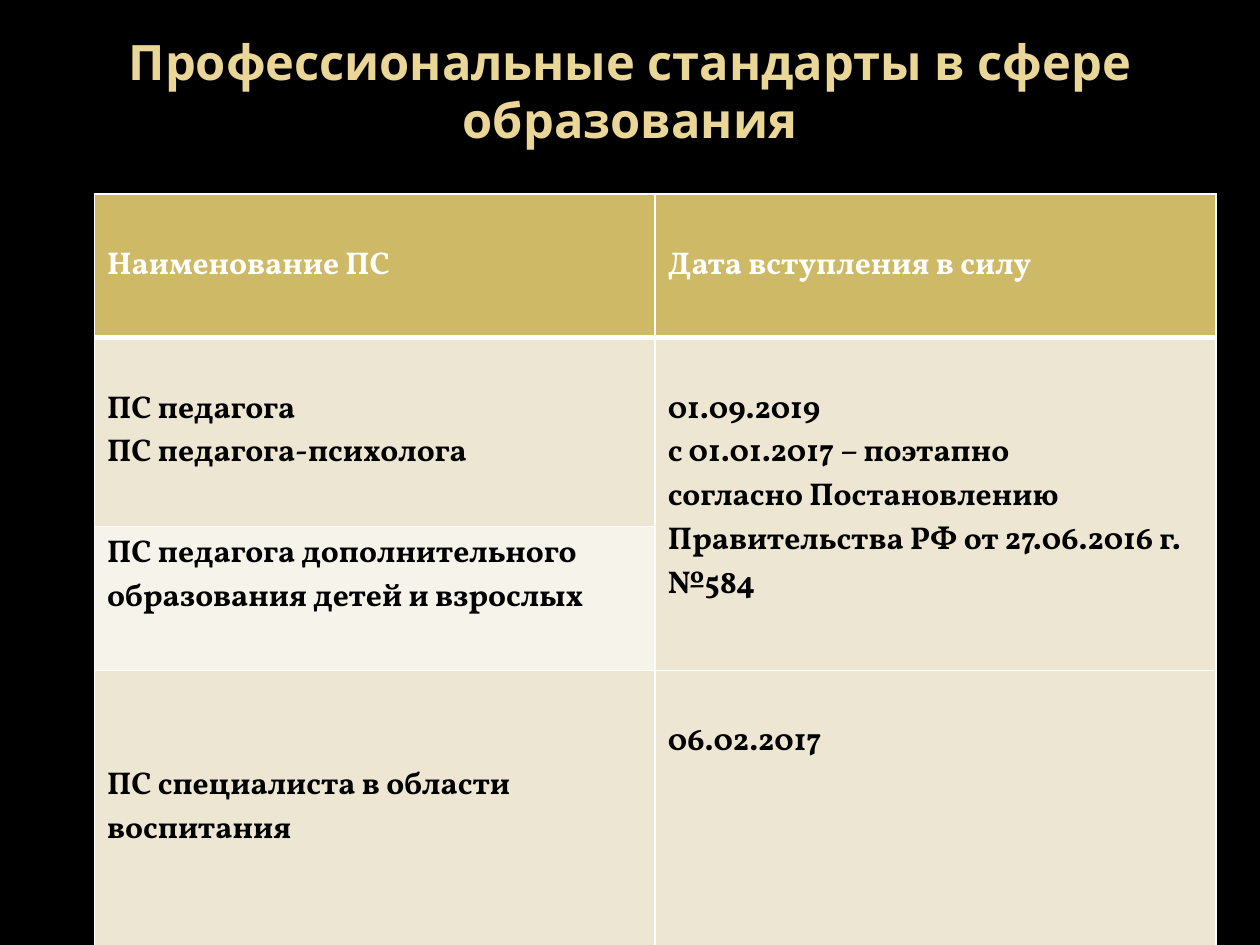
from dataclasses import dataclass

from lxml.etree import SubElement
from pptx import Presentation
from pptx.dml.color import RGBColor
from pptx.enum.text import MSO_ANCHOR as Anchor, PP_ALIGN as Align
from pptx.oxml.ns import qn
from pptx.util import Inches, Pt


@dataclass(frozen=True)
class Theme:
    background: str = "000000"
    title: str = "EAD696"
    header: str = "CEB966"
    band: str = "EDE6D3"
    light_band: str = "F6F3EA"
    header_text: str = "FFFFFF"
    body_text: str = "000000"
    border: str = "FFFFFF"
    title_font: str = "Noto Sans"
    table_font: str = "Vollkorn"
    title_size: float = 27.9
    table_size: float = 18
    thin: float = 1
    thick: float = 3


@dataclass
class CellContent:
    lines: list
    fill: str
    color: str
    top: float = 0.4
    rows: int = 1


class SlideBuilder:
    def __init__(self, deck, theme):
        self.theme = theme
        self.slide = deck.slides.add_slide(deck.slide_layouts[5])
        fill = self.slide.background.fill
        fill.solid()
        fill.fore_color.rgb = RGBColor.from_string(theme.background)

    def style(self, font, name, size, color):
        values = {"name": name, "size": Pt(size), "bold": True}
        for key, value in values.items():
            setattr(font, key, value)
        font.color.rgb = RGBColor.from_string(color)

    def title(self, text, left, top, width, height):
        box = self.slide.shapes.title
        place = {"left": left, "top": top, "width": width, "height": height}
        for key, value in place.items():
            setattr(box, key, Inches(value))
        frame = box.text_frame
        layout = {"word_wrap": True, "vertical_anchor": Anchor.MIDDLE,
                  "margin_top": 0, "margin_bottom": Inches(0.42)}
        for key, value in layout.items():
            setattr(frame, key, value)
        frame.text = text
        para = frame.paragraphs[0]
        para.alignment = Align.CENTER
        for span in para.runs:
            self.style(span.font, self.theme.title_font,
                       self.theme.title_size, self.theme.title)

    def borders(self, cell, widths):
        properties = cell._tc.get_or_add_tcPr()
        for index, (side, width) in enumerate(widths.items()):
            line = SubElement(properties, qn(f"a:ln{side}"), w=str(Pt(width)))
            paint = SubElement(line, qn("a:solidFill"))
            SubElement(paint, qn("a:srgbClr"), val=self.theme.border)
            properties.insert(index, line)

    def fill_cell(self, cell, content):
        cell.fill.solid()
        cell.fill.fore_color.rgb = RGBColor.from_string(content.fill)
        cell.margin_top = Inches(content.top)
        cell.vertical_anchor = Anchor.TOP
        cell.text = "\n".join(content.lines)
        for para in cell.text_frame.paragraphs:
            for span in para.runs:
                self.style(span.font, self.theme.table_font,
                           self.theme.table_size, content.color)

    def table(self, rows, left, top, column_width, heights):
        columns = len(rows[0])
        frame = self.slide.shapes.add_table(
            len(rows), columns, Inches(left), Inches(top),
            Inches(column_width * columns), Inches(sum(heights)))
        table = frame.table
        for column in table.columns:
            column.width = Inches(column_width)
        for r, (row, height) in enumerate(zip(rows, heights)):
            table.rows[r].height = Inches(height)
            for c, content in enumerate(row):
                cell = table.cell(r, c)
                if content:
                    self.fill_cell(cell, content)
                    if content.rows > 1:
                        cell.merge(table.cell(r + content.rows - 1, c))
                # The rule under the header is heavier than the rest
                widths = dict.fromkeys("LRTB", self.theme.thin)
                if r == 0:
                    widths["B"] = self.theme.thick
                elif r == 1:
                    widths["T"] = self.theme.thick
                self.borders(cell, widths)


def main():
    theme = Theme()
    deck = Presentation()
    deck.slide_width, deck.slide_height = Inches(10), Inches(7.5)
    page = SlideBuilder(deck, theme)

    # Title
    page.title("Профессиональные стандарты в сфере\vобразования",
               0.5, 0.3, 9, 1.25)

    # Standards and the dates they take effect
    header = {"fill": theme.header, "color": theme.header_text}
    band = {"fill": theme.band, "color": theme.body_text}
    light = {"fill": theme.light_band, "color": theme.body_text}
    rows = [
        [CellContent(["Наименование ПС"], **header),
         CellContent(["Дата вступления в силу"], **header)],
        [CellContent(["ПС педагога", "ПС педагога-психолога"], **band),
         CellContent(["01.09.2019", "с 01.01.2017 – поэтапно",
                      "согласно Постановлению Правительства РФ "
                      "от 27.06.2016 г. №584"], rows=2, **band)],
        [CellContent(["ПС педагога дополнительного образования "
                      "детей и взрослых"], top=0.05, **light), None],
        [CellContent(["ПС специалиста в области воспитания"],
                     top=0.75, **band),
         CellContent(["06.02.2017"], **band)],
    ]
    page.table(rows, 0.75, 1.54, 4.45, [1.14, 1.5, 1.14, 2.2])

    deck.save("out.pptx")


if __name__ == "__main__":
    main()
